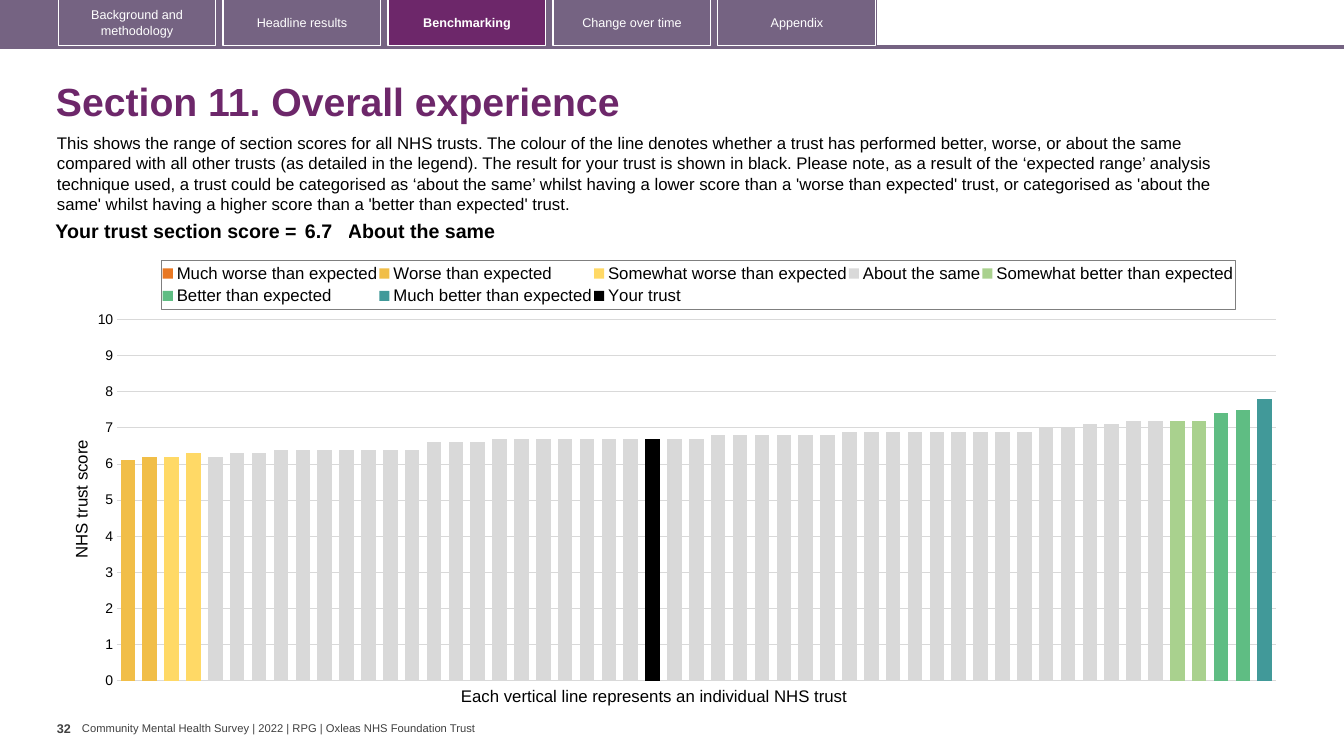
from copy import deepcopy

from lxml import etree
from pptx import Presentation
from pptx.chart.data import CategoryChartData
from pptx.dml.color import RGBColor
from pptx.enum.chart import XL_CHART_TYPE as ChartType, XL_LEGEND_POSITION as LegendPos
from pptx.enum.chart import XL_TICK_LABEL_POSITION as LabelPos, XL_TICK_MARK as TickMark
from pptx.enum.shapes import MSO_SHAPE as Shape
from pptx.enum.text import MSO_ANCHOR as Anchor, MSO_AUTO_SIZE as AutoSize, PP_ALIGN as Align
from pptx.oxml import parse_xml
from pptx.oxml.ns import nsdecls, qn
from pptx.util import Pt

PX = 914400 / 100.8
WHITE = RGBColor(0xFF, 0xFF, 0xFF)
BLACK = RGBColor(0, 0, 0)
GREY = RGBColor(0x40, 0x40, 0x40)
GRID = RGBColor(0xD9, 0xD9, 0xD9)
MAUVE = RGBColor(0x75, 0x63, 0x82)
PLUM = RGBColor(0x6D, 0x27, 0x6A)

# Content
TABS = ["Background and methodology", "Headline results", "Benchmarking",
        "Change over time", "Appendix"]
ACTIVE_TAB = "Benchmarking"
TITLE = "Section 11. Overall experience"
INTRO = (
    "This shows the range of section scores for all NHS trusts. The colour of the line denotes "
    "whether a trust has performed better, worse, or about the same compared with all other "
    "trusts (as detailed in the legend). The result for your trust is shown in black. Please "
    "note, as a result of the ‘expected range’ analysis technique used, a trust could be "
    "categorised as ‘about the same’ whilst having a lower score than a 'worse than expected' "
    "trust, or categorised as 'about the same' whilst having a higher score than a 'better than "
    "expected' trust.")
AXIS_TITLE = "NHS trust score"
CAPTION = "Each vertical line represents an individual NHS trust"
PAGE_NUMBER = "32"
FOOTER = "Community Mental Health Survey | 2022 | RPG | Oxleas NHS Foundation Trust"

# Score cells: text, width, alignment, side margin
SCORE_CELLS = [("Your trust section score =", 265, Align.RIGHT, 4),
               ("6.7", 47, Align.LEFT, 4),
               ("About the same", 866, Align.LEFT, 0)]

# Bands run from the lowest trust to the highest: name, colour, scores
BANDS = [
    ("Much worse than expected", RGBColor(0xE8, 0x77, 0x22), []),
    ("Worse than expected", RGBColor(0xF1, 0xBE, 0x48), [6.1, 6.2]),
    ("Somewhat worse than expected", RGBColor(0xFF, 0xD9, 0x66), [6.2, 6.3]),
    ("About the same", GRID,
     [6.2] + [6.3] * 2 + [6.4] * 7 + [6.6] * 3 + [6.7] * 10 + [6.8] * 6 + [6.9] * 9
     + [7] * 2 + [7.1] * 2 + [7.2] * 2),
    ("Somewhat better than expected", RGBColor(0xA9, 0xD1, 0x8E), [7.2, 7.2]),
    ("Better than expected", RGBColor(0x5F, 0xBD, 0x83), [7.4, 7.5]),
    ("Much better than expected", RGBColor(0x41, 0x99, 0x99), [7.8]),
]
YOUR_TRUST = ("Your trust", BLACK, 25, 6.7)  # name, colour, rank, score


def px(*lengths):
    return [round(length * PX) for length in lengths]


def write(frame, text, size=12, color=BLACK, bold=False, align=Align.LEFT,
          anchor=Anchor.TOP, wrap=True, margins=(10, 5), spacing=None):
    frame.auto_size = AutoSize.NONE
    frame.word_wrap = wrap
    frame.vertical_anchor = anchor
    frame.margin_left, frame.margin_top = px(*margins)
    frame.margin_right, frame.margin_bottom = px(*margins)
    para = frame.paragraphs[0]
    para.alignment = align
    para.line_spacing = spacing
    span = para.add_run()
    span.text = text
    style(span.font, size, color, bold)


def style(font, size, color=BLACK, bold=False):
    font.name, font.size, font.bold = "Arial", Pt(size), bold
    font.color.rgb = color


def add_text(page, bounds, text, **options):
    box = page.shapes.add_textbox(*px(*bounds))
    write(box.text_frame, text, **options)


def add_rectangle(page, bounds, fill=None, line=None):
    box = page.shapes.add_shape(Shape.RECTANGLE, *px(*bounds))
    box.shadow.inherit = False
    if fill is None:
        box.fill.background()
    else:
        box.fill.solid()
        box.fill.fore_color.rgb = fill
    if line is None:
        box.line.fill.background()
    else:
        box.line.color.rgb = line
        box.line.width = Pt(0.75)
    return box


def place(parent, index, target=None, **fractions):
    """Give a chart part a manual layout in fractions of the chart."""
    for old in parent.findall(qn("c:layout")):
        parent.remove(old)
    layout = etree.Element(qn("c:layout"))
    manual = etree.SubElement(layout, qn("c:manualLayout"))
    if target:
        etree.SubElement(manual, qn("c:layoutTarget")).set("val", target)
    for side in ("xMode", "yMode"):
        etree.SubElement(manual, qn("c:" + side)).set("val", "edge")
    for name, value in fractions.items():
        etree.SubElement(manual, qn("c:" + name)).set("val", str(value))
    parent.insert(index, layout)


def add_right_axis(chart):
    """Move the last series to a second column group with its own axes."""
    area = chart.plots[0]._element.getparent()
    left = area.find(qn("c:barChart"))
    right = deepcopy(left)
    left.remove(left.findall(qn("c:ser"))[-1])
    for series in right.findall(qn("c:ser"))[:-1]:
        right.remove(series)
    left.addnext(right)
    axes = [deepcopy(area.find(qn(tag))) for tag in ("c:catAx", "c:valAx")]
    area.find(qn("c:valAx")).addnext(axes[0])
    axes[0].addnext(axes[1])
    ids = {axis.find(qn("c:axId")).get("val"): str(5001 + i) for i, axis in enumerate(axes)}
    for part in [right, *axes]:
        for node in part.iter(qn("c:axId"), qn("c:crossAx")):
            node.set("val", ids[node.get("val")])
    axes[1].find(qn("c:axPos")).set("val", "r")
    axes[1].find(qn("c:crosses")).set("val", "max")


def add_score_chart(page):
    count = sum(len(scores) for _, _, scores in BANDS)
    data = CategoryChartData()
    data.categories = [str(rank) for rank in range(1, count + 1)]
    start = 0
    for name, _, scores in BANDS:
        data.add_series(name, [None] * start + scores + [None] * (count - start - len(scores)))
        start += len(scores)
    name, color, rank, score = YOUR_TRUST
    data.add_series(name, [None] * (rank - 1) + [score] + [None] * (count - rank))
    chart = page.shapes.add_chart(ChartType.COLUMN_CLUSTERED, *px(68, 249, 1225, 447), data).chart
    chart.has_title = False
    style(chart.font, 10)

    # Columns
    plot = chart.plots[0]
    plot.gap_width, plot.overlap, plot.vary_by_categories = 50, 100, False
    for series, fill in zip(plot.series, [band[1] for band in BANDS] + [color]):
        series.format.fill.solid()
        series.format.fill.fore_color.rgb = fill

    # Axes: the right one is unlabelled, the left one is labelled
    axis = chart.value_axis
    axis.minimum_scale, axis.maximum_scale, axis.major_unit = 0, 10, 1
    axis.format.line.fill.background()
    axis.has_major_gridlines = False
    axis.tick_label_position = LabelPos.NONE
    chart.category_axis.visible = False
    add_right_axis(chart)
    axis.major_tick_mark = TickMark.NONE
    axis.tick_label_position = LabelPos.NEXT_TO_AXIS
    axis.has_major_gridlines = True
    axis.major_gridlines.format.line.color.rgb = GRID
    axis.major_gridlines.format.line.width = Pt(0.75)
    style(axis.tick_labels.font, 10)
    axis.axis_title.text_frame.text = AXIS_TITLE
    style(axis.axis_title.text_frame.paragraphs[0].runs[0].font, 12)
    place(axis.axis_title._element, 1, x=0, y=0.42)
    place(plot._element.getparent(), 0, "inner", x=0.04, y=0.158, w=0.946, h=0.808)

    # Legend in a thin frame
    chart.has_legend = True
    legend = chart.legend
    legend.position, legend.include_in_layout = LegendPos.TOP, False
    style(legend.font, 12)
    place(legend._element, 1, x=0.076, y=0.025, w=0.877, h=0.11)
    legend._element.find(qn("c:txPr")).addprevious(parse_xml(
        f'<c:spPr {nsdecls("c", "a")}><a:ln w="9525"><a:solidFill>'
        '<a:srgbClr val="7F7F7F"/></a:solidFill></a:ln></c:spPr>'))


def add_score_table(page):
    width = sum(cell[1] for cell in SCORE_CELLS)
    table = page.shapes.add_table(1, len(SCORE_CELLS), *px(36, 217, width, 31)).table
    table.first_row = table.horz_banding = False
    for i, (text, column_width, align, margin) in enumerate(SCORE_CELLS):
        table.columns[i].width = px(column_width)[0]
        cell = table.cell(0, i)
        cell.fill.background()
        cell.margin_left, cell.margin_right, cell.margin_top, cell.margin_bottom = px(
            margin, margin, 4, 4)
        para = cell.text_frame.paragraphs[0]
        para.alignment = align
        span = para.add_run()
        span.text = text
        style(span.font, 14, bold=True)


def main():
    deck = Presentation()
    deck.slide_width, deck.slide_height = px(1344, 756)
    page = deck.slides.add_slide(deck.slide_layouts[5])

    # Navigation band
    add_rectangle(page, (0, 45, 1344, 4), MAUVE)
    add_rectangle(page, (0, 0, 877, 47), MAUVE)
    for i, label in enumerate(TABS):
        active = label == ACTIVE_TAB
        tab = add_rectangle(page, (58 + 165 * i, -1, 158, 47), PLUM if active else None, WHITE)
        write(tab.text_frame, label, size=9, color=WHITE, bold=active,
              align=Align.CENTER, anchor=Anchor.MIDDLE)

    # Title and introduction
    title = page.shapes.title
    title.left, title.top, title.width, title.height = px(46, 67, 1259, 73)
    write(title.text_frame, TITLE, size=28, color=PLUM, bold=True,
          anchor=Anchor.MIDDLE, spacing=0.9)
    add_text(page, (47, 128, 1223, 92), INTRO)

    # Scores
    add_score_chart(page)
    add_score_table(page)
    add_text(page, (451, 681, 414, 30), CAPTION, wrap=False)

    # Footer
    add_text(page, (57, 716, 25, 40), PAGE_NUMBER, size=9, color=GREY, bold=True,
             wrap=False, margins=(0, 5))
    add_text(page, (82, 722, 399, 13), FOOTER, size=8, color=GREY,
             anchor=Anchor.MIDDLE, wrap=False, margins=(0, 0))
    deck.save("out.pptx")


if __name__ == "__main__":
    main()
